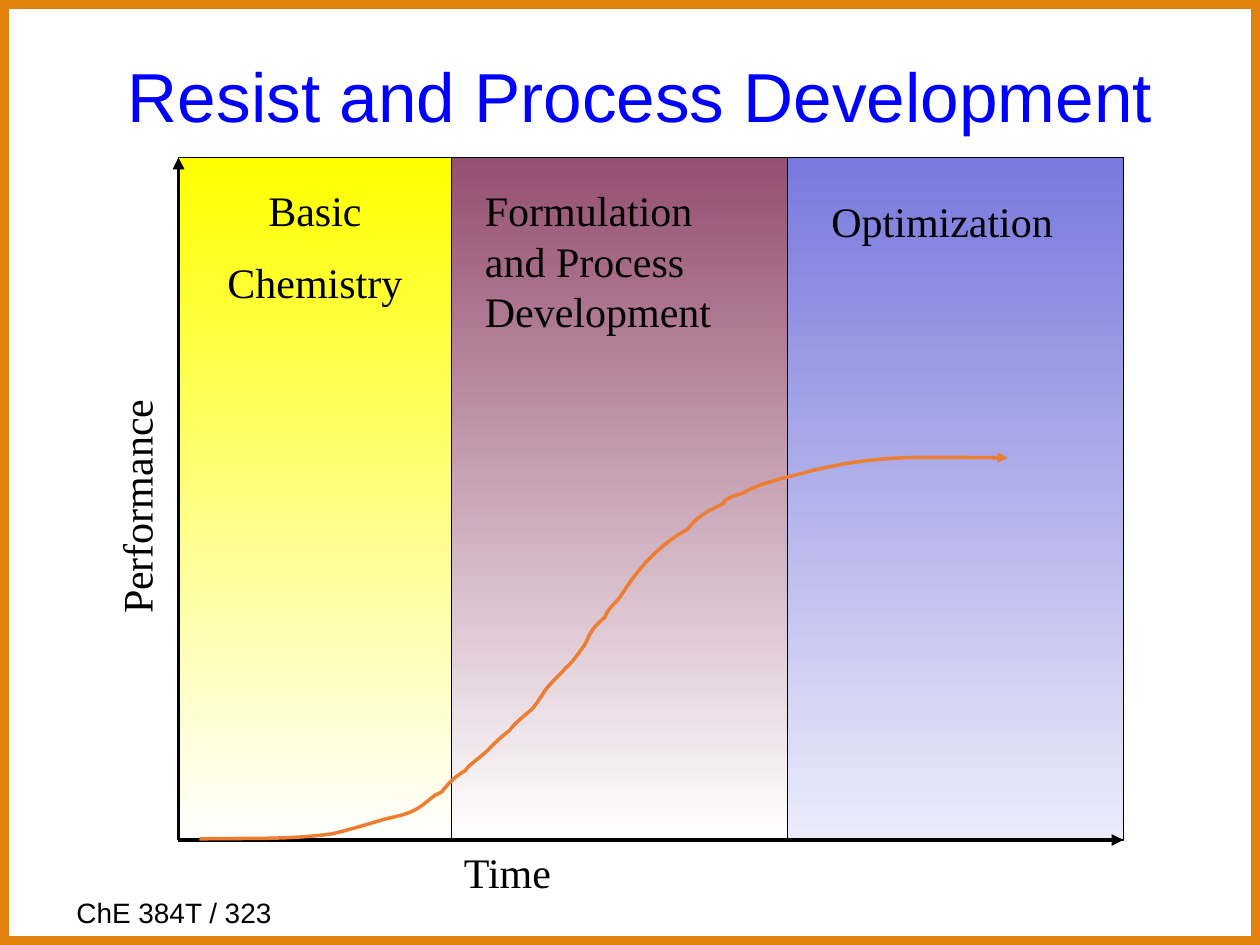
import lxml.etree
import pptx
import pptx.dml.color
import pptx.enum.shapes
import pptx.enum.text
import pptx.oxml.ns
import pptx.util
from dataclasses import dataclass

PX = 7620  # EMU per px, 120 px to the inch
qn = pptx.oxml.ns.qn


@dataclass(frozen=True)
class Theme:
    sans: str = "Arial"
    serif: str = "Times New Roman"
    ink: str = "000000"
    paper: str = "FFFFFF"
    title: str = "0000FF"
    frame: str = "E2820E"
    curve: str = "ED7D31"
    basic: tuple = ("FFFF00", "FFFFFF")
    formulation: tuple = ("954F72", "FFFFFF")
    optimization: tuple = ("7979DD", "EBEBFA")
    title_size: float = 39.6
    label_size: float = 24
    footer_size: float = 16
    label_leading: float = 28.8


def rgb(value):
    return pptx.dml.color.RGBColor.from_string(value)


class SlideBuilder:
    def __init__(self, slide, theme):
        self.s = slide
        self.theme = theme

    def stroke(self, sp, color, width, arrow=False):
        sp.line.color.rgb = rgb(color)
        sp.line.width = pptx.util.Pt(width)
        if arrow:
            ln = sp.line._get_or_add_ln()
            lxml.etree.SubElement(ln, qn("a:tailEnd"), type="triangle")

    def rect(self, box, color, width, gradient=None):
        sp = self.s.shapes.add_shape(
            pptx.enum.shapes.MSO_SHAPE.RECTANGLE, *(v * PX for v in box))
        sp.shadow.inherit = False
        if gradient:
            sp.fill.gradient()
            sp.fill.gradient_angle = 270
            for stop, stop_color in zip(sp.fill.gradient_stops, gradient):
                stop.color.rgb = rgb(stop_color)
        else:
            sp.fill.background()
        self.stroke(sp, color, width)

    def arrow(self, start, end):
        sp = self.s.shapes.add_connector(
            pptx.enum.shapes.MSO_CONNECTOR.STRAIGHT,
            *(v * PX for v in start + end))
        self.stroke(sp, self.theme.ink, 2.25, arrow=True)
        lxml.etree.SubElement(sp._element.spPr, qn("a:effectLst"))

    def curve(self, points):
        """Draw a start point followed by triples of cubic Bezier points."""
        start, *rest = [(x * PX, y * PX) for x, y in points]
        builder = self.s.shapes.build_freeform(*start)
        builder.add_line_segments(rest, close=False)
        sp = builder.convert_to_shape()
        sp.shadow.inherit = False
        sp.fill.background()
        self.stroke(sp, self.theme.curve, 2, arrow=True)
        # Turn each three line segments into one cubic segment
        segments = list(sp._element.iter(qn("a:lnTo")))
        for i in range(0, len(segments), 3):
            first, *others = segments[i:i + 3]
            first.tag = qn("a:cubicBezTo")
            for other in others:
                first.append(other[0])
                other.getparent().remove(other)

    def text(self, box, lines, font, size, color, leading=None,
             centered=False, fill=None, rotation=0):
        sp = self.s.shapes.add_textbox(*(v * PX for v in box))
        sp.rotation = rotation
        tf = sp.text_frame
        tf.word_wrap = True
        if fill:
            sp.fill.solid()
            sp.fill.fore_color.rgb = rgb(fill)
            tf.vertical_anchor = pptx.enum.text.MSO_ANCHOR.MIDDLE
        for i, line in enumerate(lines):
            p = tf.add_paragraph() if i else tf.paragraphs[0]
            if i:
                p.space_before = pptx.util.Pt(size / 2)
            if leading:
                p.line_spacing = leading
            if centered:
                p.alignment = pptx.enum.text.PP_ALIGN.CENTER
            r = p.add_run()
            r.text = line
            r.font.name = font
            r.font.size = pptx.util.Pt(size)
            r.font.color.rgb = rgb(color)

    def label(self, box, *lines, **options):
        t = self.theme
        self.text(box, lines, t.serif, t.label_size, t.ink,
                  leading=pptx.util.Pt(t.label_leading), **options)


# Performance over time: start, then two control points and an end per row
PERFORMANCE = [
    (190, 799),
    (234, 798), (275, 800), (317, 794),
    (334, 790), (350, 785), (367, 780),
    (376, 778), (385, 776), (392, 773),
    (401, 769), (408, 762), (415, 757),
    (418, 756), (421, 754), (421, 754),
    (427, 746), (434, 739), (443, 734),
    (448, 727), (457, 722), (464, 715),
    (470, 709), (478, 701), (485, 696),
    (491, 688), (499, 682), (506, 676),
    (512, 670), (517, 660), (522, 654),
    (527, 648), (534, 642), (539, 636),
    (546, 630), (551, 622), (557, 614),
    (558, 612), (560, 608), (560, 608),
    (563, 600), (569, 594), (576, 588),
    (580, 577), (588, 574), (593, 565),
    (608, 541), (629, 518), (655, 504),
    (662, 494), (673, 487), (684, 482),
    (697, 476), (682, 481), (695, 474),
    (696, 473), (706, 470), (707, 470),
    (724, 460), (744, 456), (763, 451),
    (833, 432), (880, 436), (960, 436),
]


def main():
    theme = Theme()
    width, height = 1200, 900
    prs = pptx.Presentation()
    prs.slide_width, prs.slide_height = width * PX, height * PX
    b = SlideBuilder(prs.slides.add_slide(prs.slide_layouts[6]), theme)

    # Footer, frame and title
    b.text((61, 847, 343, 44), ["ChE 384T / 323"], theme.sans,
           theme.footer_size, theme.ink)
    b.rect((0, 0, width, height), theme.frame, 10)
    b.text((110, 50, 1020, 90), ["Resist and Process Development"], theme.sans,
           theme.title_size, theme.title, leading=0.9, fill=theme.paper)

    # Development phases, side by side
    left, top, right, bottom = 170, 150, 1070, 800
    phases = [(750, right, theme.optimization),
              (430, 750, theme.formulation),
              (left, 430, theme.basic)]
    for start, end, gradient in phases:
        b.rect((start, top, end - start, bottom - top), theme.ink, 0.75, gradient)

    # Axes and performance curve
    origin = (left, bottom)
    b.arrow(origin, (left, top))
    b.arrow(origin, (right, bottom))
    b.curve(PERFORMANCE)

    # Phase and axis labels
    b.label((200, 170, 200, 132), "Basic", "Chemistry", centered=True)
    b.label((450, 170, 260, 156), "Formulation and Process Development")
    b.label((780, 180, 250, 60), "Optimization")
    b.label((-29, 408, 317, 60), "Performance", rotation=270)
    b.label((430, 800, 200, 60), "Time")

    prs.save("out.pptx")


if __name__ == "__main__":
    main()
